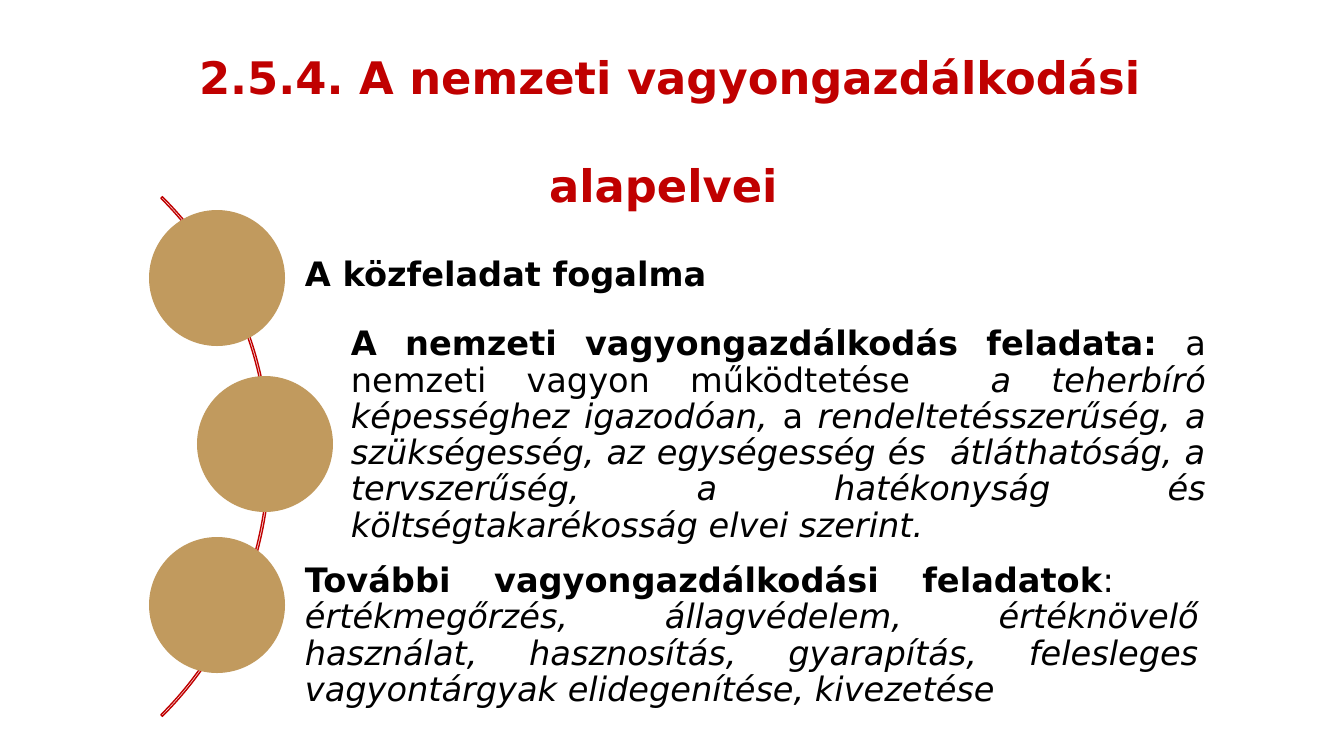
from pptx import Presentation
from pptx.dml.color import RGBColor
from pptx.enum.shapes import MSO_SHAPE as Shape
from pptx.enum.text import MSO_ANCHOR as Anchor, MSO_AUTO_SIZE as AutoSize, PP_ALIGN as Align
from pptx.util import Pt

SLIDE_WIDTH, SLIDE_HEIGHT = 1344, 756
EMU_PER_PX = 12192000 / SLIDE_WIDTH
FONT = "DejaVu Sans"
RED, GOLD, BLACK = "C00000", "C19A5E", "000000"
CIRCLE_SIZE = 136
BOLD, PLAIN, ITALIC = {"bold": True}, {"bold": False}, {"bold": False, "italic": True}

TITLE = [(" ", 28), ("2.5.4. A nemzeti vagyongazdálkodási \valapelvei", 32)]
PRINCIPLES = [
    ((218, 233, 988, 85), (149, 210), [("A közfeladat fogalma", BOLD)]),
    ((264, 334, 949, 203), (197, 376), [
        ("A nemzeti vagyongazdálkodás feladata: ", BOLD),
        ("a nemzeti vagyon működtetése  ", PLAIN),
        ("a teherbíró képességhez igazodóan,", ITALIC),
        (" a ", PLAIN),
        ("rendeltetésszerűség, a szükségesség, az egységesség és  átláthatóság, a "
         "tervszerűség, a hatékonyság és költségtakarékosság elvei szerint. ", ITALIC),
    ]),
    ((218, 560, 988, 152), (149, 537), [
        ("További vagyongazdálkodási feladatok", BOLD),
        (":   ", PLAIN),
        ("értékmegőrzés, állagvédelem, értéknövelő használat, hasznosítás, gyarapítás, "
         "felesleges vagyontárgyak elidegenítése, kivezetése", ITALIC),
    ]),
]


def px(length):
    return round(length * EMU_PER_PX)


def color(value):
    return RGBColor.from_string(value)


def set_values(target, values):
    for name, value in values.items():
        setattr(target, name, value)


def place(shape, box):
    set_values(shape, dict(zip(("left", "top", "width", "height"), map(px, box))))


def add_run(paragraph, text, size, text_color, style):
    first, *rest = text.split("\v")
    for index, line in enumerate([first, *rest]):
        if index:
            paragraph.add_line_break()
        run = paragraph.add_run()
        run.text = line
        set_values(run.font, {"name": FONT, "size": Pt(size), **style})
        run.font.color.rgb = color(text_color)


def add_title(slide, box):
    title = slide.shapes.title
    place(title, box)
    frame = title.text_frame
    set_values(frame, {"word_wrap": True, "auto_size": AutoSize.SHAPE_TO_FIT_TEXT,
                       "vertical_anchor": Anchor.TOP})
    paragraph = frame.paragraphs[0]
    set_values(paragraph, {"alignment": Align.CENTER, "line_spacing": 1.0})
    paragraph.font.size = Pt(32)
    for text, size in TITLE:
        add_run(paragraph, text, size, RED, BOLD)


def add_arc(slide, box):
    arc = slide.shapes.add_shape(Shape.BLOCK_ARC, *map(px, box))
    arc.shadow.inherit = False
    for index, value in enumerate((189, 27, 0.003)):
        arc.adjustments[index] = value
    arc.fill.background()
    arc.line.color.rgb = color(RED)
    arc.line.width = Pt(1)


def add_principle(slide, box, circle_corner, runs):
    frame = slide.shapes.add_textbox(*map(px, box)).text_frame
    set_values(frame, {"word_wrap": True, "vertical_anchor": Anchor.MIDDLE,
                       "margin_left": px(87), "margin_right": px(7),
                       "margin_top": px(7), "margin_bottom": px(7)})
    paragraph = frame.paragraphs[0]
    set_values(paragraph, {"alignment": Align.JUSTIFY, "line_spacing": 0.9})
    for text, style in runs:
        add_run(paragraph, text, 24, BLACK, style)

    circle = slide.shapes.add_shape(
        Shape.OVAL, *map(px, (*circle_corner, CIRCLE_SIZE, CIRCLE_SIZE)))
    circle.shadow.inherit = False
    circle.fill.solid()
    circle.fill.fore_color.rgb = color(GOLD)
    circle.line.fill.background()


def main():
    presentation = Presentation()
    presentation.slide_width, presentation.slide_height = px(SLIDE_WIDTH), px(SLIDE_HEIGHT)
    slide = presentation.slides.add_slide(presentation.slide_layouts[5])
    add_title(slide, (170, 45, 987, 119))
    add_arc(slide, (-465, 89, 735, 735))
    for box, circle_corner, runs in PRINCIPLES:
        add_principle(slide, box, circle_corner, runs)
    presentation.save("out.pptx")


if __name__ == "__main__":
    main()
